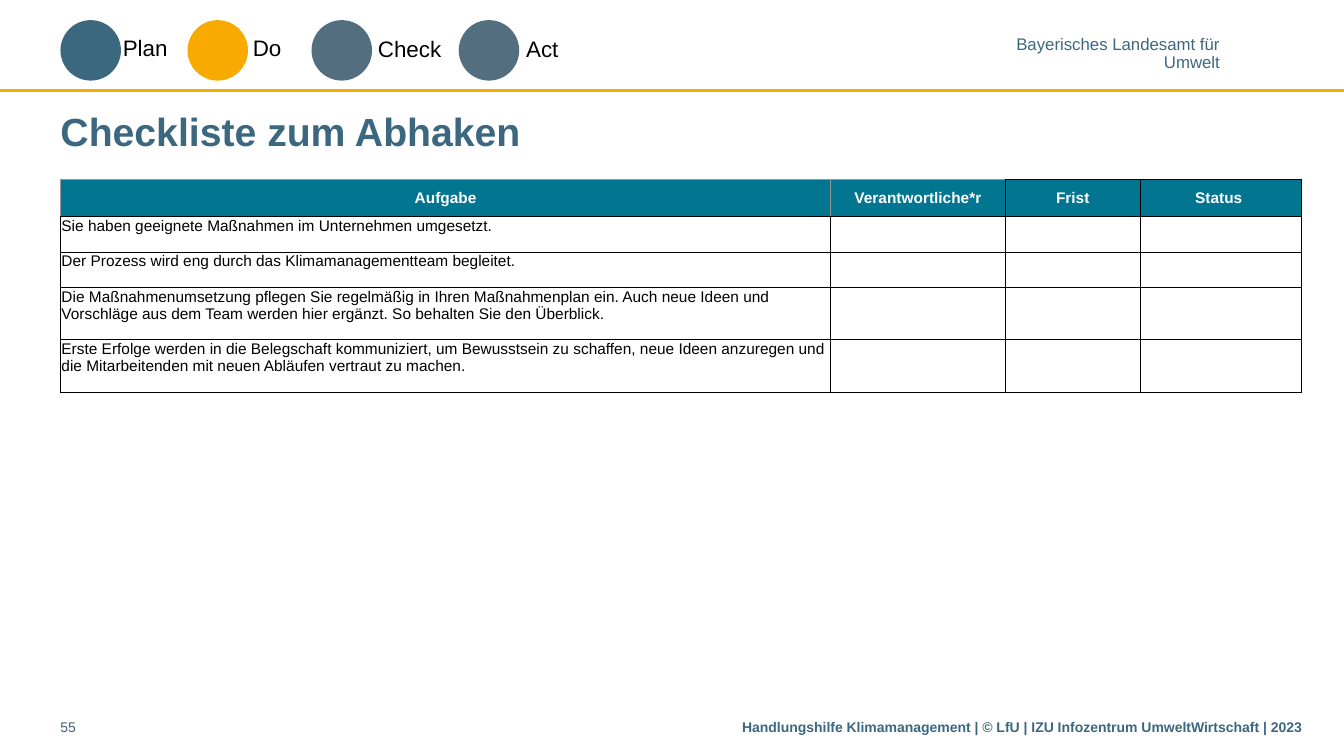
import dataclasses
import typing

import pptx
import pptx.dml.color
import pptx.enum.shapes
import pptx.enum.text
import pptx.oxml
import pptx.oxml.ns
import pptx.slide
import pptx.table
import pptx.text.text
import pptx.util

Inches = pptx.util.Inches
ALIGN = pptx.enum.text.PP_ALIGN
ANCHOR = pptx.enum.text.MSO_ANCHOR


@dataclasses.dataclass(frozen=True)
class Theme:
    font: str = "Arial"
    petrol: str = "3B687F"
    amber: str = "F9AA00"
    slate: str = "526E7F"
    header_fill: str = "027591"
    header_border: str = "969696"
    black: str = "000000"
    white: str = "FFFFFF"
    title_size: float = 28
    phase_size: float = 16
    agency_size: float = 12
    table_size: float = 11
    footer_size: float = 10


THEME = Theme()


@dataclasses.dataclass(frozen=True)
class Phase:
    name: str
    circle_left: float
    label_left: float
    label_top: float
    label_width: float
    color: str


@dataclasses.dataclass(frozen=True)
class Task:
    text: str
    height: float


PHASES = [
    Phase("Plan", 0.6, 1.12, 0.29, 1.67, THEME.petrol),
    Phase("Do", 1.86, 2.41, 0.29, 1.36, THEME.amber),
    Phase("Check", 3.09, 3.65, 0.3, 2.95, THEME.slate),
    Phase("Act", 4.55, 5.12, 0.3, 2.95, THEME.slate),
]
COLUMNS = {"Aufgabe": 7.64, "Verantwortliche*r": 1.73, "Frist": 1.34, "Status ": 1.6}
HEADER_HEIGHT = 0.37
TASKS = [
    Task("Sie haben geeignete Maßnahmen im Unternehmen umgesetzt.", 0.35),
    Task("Der Prozess wird eng durch das Klimamanagementteam begleitet.", 0.35),
    Task("Die Maßnahmenumsetzung pflegen Sie regelmäßig in Ihren Maßnahmenplan ein. "
         "Auch neue Ideen und Vorschläge aus dem Team werden hier ergänzt. "
         "So behalten Sie den Überblick.", 0.52),
    Task("Erste Erfolge werden in die Belegschaft kommuniziert, um Bewusstsein zu schaffen, "
         "neue Ideen anzuregen und die Mitarbeitenden mit neuen Abläufen vertraut zu machen. ", 0.52),
]


def rgb(color: str) -> pptx.dml.color.RGBColor:
    return pptx.dml.color.RGBColor.from_string(color)


def write_text(frame: pptx.text.text.TextFrame, text: str, *, size: float, color: str,
               bold: bool = False, align: ALIGN = ALIGN.LEFT,
               line_spacing: typing.Optional[float] = None) -> None:
    frame.text = text
    for paragraph in frame.paragraphs:
        paragraph.alignment = align
        if line_spacing:
            paragraph.line_spacing = line_spacing
        for run in paragraph.runs:
            run.font.name = THEME.font
            run.font.size = pptx.util.Pt(size)
            run.font.bold = bold
            run.font.color.rgb = rgb(color)


def add_text_frame(slide: pptx.slide.Slide, left: float, top: float, width: float, height: float,
                   *, side: float = 0.1, edge: float = 0.05,
                   wrap: bool = True) -> pptx.text.text.TextFrame:
    frame = slide.shapes.add_textbox(
        Inches(left), Inches(top), Inches(width), Inches(height)).text_frame
    frame.word_wrap = wrap
    frame.margin_left = frame.margin_right = Inches(side)
    frame.margin_top = frame.margin_bottom = Inches(edge)
    return frame


def add_phase(slide: pptx.slide.Slide, phase: Phase) -> None:
    circle = slide.shapes.add_shape(
        pptx.enum.shapes.MSO_SHAPE.OVAL,
        Inches(phase.circle_left), Inches(0.2), Inches(0.6), Inches(0.6))
    circle.shadow.inherit = False
    circle.fill.solid()
    circle.fill.fore_color.rgb = rgb(phase.color)
    circle.line.fill.background()
    label = add_text_frame(slide, phase.label_left, phase.label_top, phase.label_width, 0.37)
    write_text(label, phase.name, size=THEME.phase_size, color=THEME.black)


def add_header_rule(slide: pptx.slide.Slide) -> None:
    rule = slide.shapes.add_connector(
        pptx.enum.shapes.MSO_CONNECTOR.STRAIGHT,
        Inches(0), Inches(0.9), Inches(13.33), Inches(0.9))
    rule.line.color.rgb = rgb(THEME.amber)
    rule.line.width = pptx.util.Pt(2)
    properties = rule._element.spPr
    properties.append(properties.makeelement(pptx.oxml.ns.qn("a:effectLst"), {}))


def format_cell(cell: pptx.table._Cell, grey_sides: str = "") -> None:
    cell.margin_left = cell.margin_right = cell.margin_top = Inches(0.01)
    cell.margin_bottom = 0
    properties = cell._tc.get_or_add_tcPr()
    for side in "LRTB":
        color = THEME.header_border if side in grey_sides else THEME.black
        properties.append(pptx.oxml.parse_xml(
            f'<a:ln{side} {pptx.oxml.ns.nsdecls("a")} w="6350"><a:solidFill>'
            f'<a:srgbClr val="{color}"/></a:solidFill></a:ln{side}>'))


def add_checklist(slide: pptx.slide.Slide) -> None:
    heights = [HEADER_HEIGHT] + [task.height for task in TASKS]
    checklist = slide.shapes.add_table(
        len(heights), len(COLUMNS), Inches(0.6), Inches(1.78),
        Inches(sum(COLUMNS.values())), Inches(sum(heights))).table
    checklist.first_row = checklist.horz_banding = False
    for row, height in zip(checklist.rows, heights):
        row.height = Inches(height)
    grey_sides = ["LTR", "LT", "", ""]
    for index, (heading, width) in enumerate(COLUMNS.items()):
        checklist.columns[index].width = Inches(width)
        head = checklist.cell(0, index)
        format_cell(head, grey_sides[index])
        head.vertical_anchor = ANCHOR.MIDDLE
        head.fill.solid()
        head.fill.fore_color.rgb = rgb(THEME.header_fill)
        write_text(head.text_frame, heading, size=THEME.table_size, color=THEME.white,
                   bold=True, align=ALIGN.CENTER)
        for number, task in enumerate(TASKS, 1):
            cell = checklist.cell(number, index)
            format_cell(cell)
            cell.fill.background()
            if index == 0:
                write_text(cell.text_frame, task.text, size=THEME.table_size, color=THEME.black)


def add_title(slide: pptx.slide.Slide) -> None:
    title = slide.shapes.title
    title.left, title.top = Inches(0.6), Inches(1.02)
    title.width, title.height = Inches(12.31), Inches(0.55)
    frame = title.text_frame
    frame.margin_left = frame.margin_right = 0
    frame.vertical_anchor = ANCHOR.MIDDLE
    frame.auto_size = pptx.enum.text.MSO_AUTO_SIZE.NONE
    write_text(frame, "Checkliste zum Abhaken", size=THEME.title_size,
               color=THEME.petrol, bold=True)


def main() -> None:
    presentation = pptx.Presentation()
    presentation.slide_width, presentation.slide_height = Inches(13.33), Inches(7.5)
    slide = presentation.slides.add_slide(presentation.slide_layouts.get_by_name("Title Only"))
    add_header_rule(slide)
    agency = add_text_frame(slide, 10.07, 0.37, 2.03, 0.34, side=0, edge=0, wrap=False)
    write_text(agency, "Bayerisches Landesamt für\nUmwelt", size=THEME.agency_size,
               color=THEME.petrol, align=ALIGN.RIGHT, line_spacing=0.85)
    for phase in PHASES:
        add_phase(slide, phase)
    add_title(slide)
    add_checklist(slide)
    footer = add_text_frame(slide, 5.92, 7.08, 6.99, 0.31, side=0)
    write_text(footer,
               "Handlungshilfe Klimamanagement | © LfU | IZU Infozentrum UmweltWirtschaft | 2023",
               size=THEME.footer_size, color=THEME.petrol, bold=True, align=ALIGN.RIGHT)
    page_number = add_text_frame(slide, 0.6, 7.08, 0.7, 0.31, side=0)
    write_text(page_number, "55", size=THEME.footer_size, color=THEME.petrol)
    presentation.save("out.pptx")


if __name__ == "__main__":
    main()
